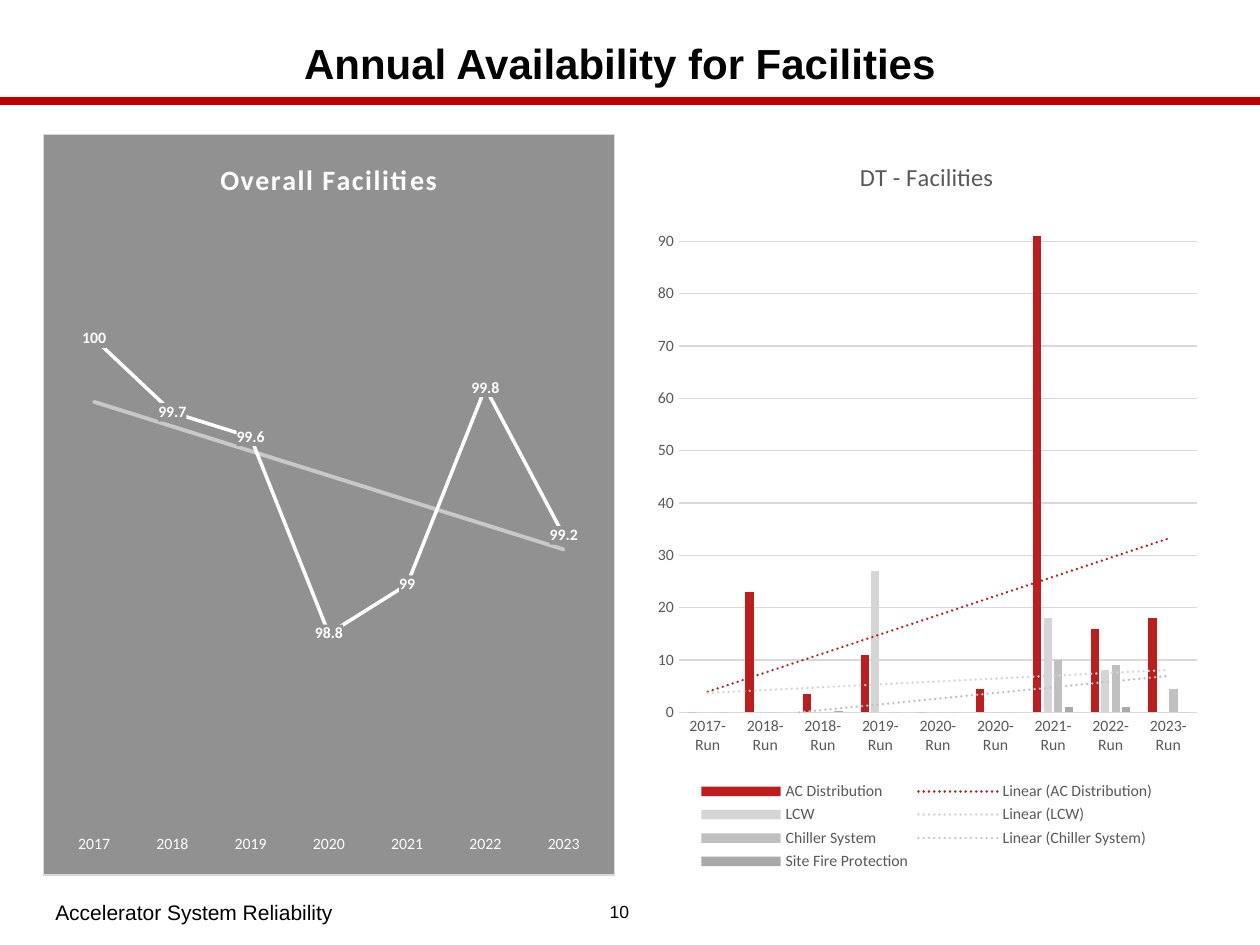
import dataclasses

import lxml.etree
import pptx
import pptx.chart.data
import pptx.dml.color
import pptx.enum.chart
import pptx.enum.shapes
import pptx.enum.text
import pptx.oxml
import pptx.oxml.ns
import pptx.util

Inches = pptx.util.Inches
Pt = pptx.util.Pt
qn = pptx.oxml.ns.qn
Chart = pptx.enum.chart
Align = pptx.enum.text.PP_ALIGN


@dataclasses.dataclass(frozen=True)
class Theme:
    """Colours, fonts and type sizes of the slide."""
    text_font: str = "Arial"
    chart_font: str = "Calibri"
    black: str = "000000"
    white: str = "FFFFFF"
    rule: str = "C00000"
    panel: str = "919191"
    grid: str = "D9D9D9"
    label: str = "595959"
    columns: tuple = ("BE1D1D", "D5D5D5", "C0C0C0", "A9A9A9")
    title_size: int = 24
    footer_size: int = 12
    number_size: int = 10
    panel_title_size: int = 16
    chart_title_size: int = 14
    chart_size: int = 9


THEME = Theme()
YEARS = ["2017", "2018", "2019", "2020", "2021", "2022", "2023"]
AVAILABILITY = [100, 99.7, 99.6, 98.8, 99, 99.8, 99.2]
RUNS = [year + "-Run" for year in
        ("2017", "2018", "2018", "2019", "2020", "2020", "2021", "2022", "2023")]
DOWNTIME = {
    "AC Distribution": [0, 23, 3.5, 11, 0, 4.5, 91, 16, 18],
    "LCW": [0, 0, 0, 27, 0, 0, 18, 8, 0],
    "Chiller System": [0, 0, 0, 0, 0, 0, 10, 9, 4.5],
    "Site Fire Protection": [0, 0, 0.3, 0, 0, 0, 1, 1, 0],
}


def rgb(value):
    """Return a colour from its hex digits."""
    return pptx.dml.color.RGBColor.from_string(value)


def style_font(font, name, size, color, bold=False):
    """Set the face, size, colour and weight of a font."""
    font.name, font.size, font.bold = name, Pt(size), bold
    font.color.rgb = rgb(color)


def style_line(line, color, width):
    """Give a line a solid colour and a width in points."""
    line.color.rgb = rgb(color)
    line.width = Pt(width)


def chart_xml(body):
    """Parse one chart element, with its namespaces declared."""
    name, rest = body[1:].split(">", 1)
    spaces = pptx.oxml.ns.nsdecls("c", "a")
    return pptx.oxml.parse_xml(f"<{name} {spaces}>{rest}")


def solid_fill(color, opacity=100):
    """Return the XML of a solid fill."""
    return (f'<a:solidFill><a:srgbClr val="{color}">'
            f'<a:alpha val="{opacity * 1000}"/></a:srgbClr></a:solidFill>')


def add_text(page, box, text, size, align=Align.LEFT, bold=False, spacing=1.0):
    """Place one line of text, centred vertically in its box."""
    frame = page.shapes.add_textbox(*map(Inches, box)).text_frame
    frame.word_wrap = True
    frame.vertical_anchor = pptx.enum.text.MSO_ANCHOR.MIDDLE
    para = frame.paragraphs[0]
    para.text, para.alignment, para.line_spacing = text, align, spacing
    style_font(para.font, THEME.text_font, size, THEME.black, bold)


def add_rule(page, left, right, top):
    """Draw the heavy rule under the heading."""
    rule = page.shapes.add_connector(
        pptx.enum.shapes.MSO_CONNECTOR.STRAIGHT,
        Inches(left), Inches(top), Inches(right), Inches(top))
    style_line(rule.line, THEME.rule, 4.5)
    lxml.etree.SubElement(rule.line._get_or_add_ln().getparent(), qn("a:effectLst"))


def add_trend(series, color, width, dash, opacity=100):
    """Add a linear trend line to a series."""
    trend = chart_xml(
        f'<c:trendline><c:spPr><a:ln w="{Pt(width)}" cap="rnd">'
        f'{solid_fill(color, opacity)}<a:prstDash val="{dash}"/></a:ln></c:spPr>'
        '<c:trendlineType val="linear"/><c:dispRSqr val="0"/>'
        '<c:dispEq val="0"/></c:trendline>')
    series._element.find(qn("c:cat")).addprevious(trend)


def place_plot(chart, left, top, width, height):
    """Fix the inner plot area as fractions of the chart."""
    area = chart._chartSpace.chart.plotArea
    for old in area.findall(qn("c:layout")):
        area.remove(old)
    sizes = "".join(f'<c:{key} val="{value}"/>' for key, value in
                    zip("xywh", (left, top, width, height)))
    area.insert(0, chart_xml(
        '<c:layout><c:manualLayout><c:layoutTarget val="inner"/>'
        '<c:xMode val="edge"/><c:yMode val="edge"/>'
        f'{sizes}</c:manualLayout></c:layout>'))


def add_chart(page, box, kind, categories, rows, title, title_style, axis_color):
    """Add a chart with its title and axis text, and return it."""
    data = pptx.chart.data.CategoryChartData()
    data.categories = categories
    for name, values in rows.items():
        data.add_series(name, values)
    chart = page.shapes.add_chart(kind, *map(Inches, box), data).chart
    style_font(chart.font, THEME.chart_font, THEME.chart_size, axis_color)
    chart.has_title, chart.has_legend = True, False
    para = chart.chart_title.text_frame.paragraphs[0]
    para.text = title
    style_font(para.font, THEME.chart_font, *title_style)
    chart.chart_title.include_in_layout = False
    chart.plots[0].vary_by_categories = False
    for axis in (chart.category_axis, chart.value_axis):
        axis.major_tick_mark = axis.minor_tick_mark = Chart.XL_TICK_MARK.NONE
        axis.format.line.fill.background()
        style_font(axis.tick_labels.font, THEME.chart_font, THEME.chart_size, axis_color)
    return chart


def add_availability(page, box):
    """Build the grey panel with the yearly availability line."""
    chart = add_chart(page, box, Chart.XL_CHART_TYPE.LINE, YEARS,
                      {"Series 1": AVAILABILITY}, "Overall Facilities",
                      (THEME.panel_title_size, THEME.white, True), THEME.white)
    title = chart.chart_title.text_frame.paragraphs[0]
    title.font._element.set("spc", "100")
    axis = chart.value_axis
    axis.minimum_scale, axis.maximum_scale = 98, 100.5
    axis.has_major_gridlines = axis.visible = False
    place_plot(chart, 0.02, 0.11, 0.96, 0.83)
    series = chart.series[0]
    series.smooth = False
    series.marker.style = Chart.XL_MARKER_STYLE.NONE
    style_line(series.format.line, THEME.white, 2)
    labels = series.data_labels
    labels.show_value, labels.position = True, Chart.XL_LABEL_POSITION.CENTER
    style_font(labels.font, THEME.chart_font, THEME.chart_size, THEME.white, True)
    labels._element.find(qn("c:txPr")).addprevious(
        chart_xml(f"<c:spPr>{solid_fill(THEME.panel)}</c:spPr>"))
    add_trend(series, THEME.white, 2.25, "solid", 50)
    chart._chartSpace.chart.addnext(chart_xml(
        f'<c:spPr>{solid_fill(THEME.panel)}<a:ln w="{Pt(0.75)}">'
        f'{solid_fill(THEME.grid)}</a:ln></c:spPr>'))


def add_downtime(page, box):
    """Build the column chart of downtime for each run."""
    chart = add_chart(page, box, Chart.XL_CHART_TYPE.COLUMN_CLUSTERED, RUNS,
                      DOWNTIME, "DT - Facilities",
                      (THEME.chart_title_size, THEME.label), THEME.label)
    axis = chart.value_axis
    axis.minimum_scale, axis.maximum_scale, axis.major_unit = 0, 95, 10
    style_line(axis.major_gridlines.format.line, THEME.grid, 0.75)
    style_line(chart.category_axis.format.line, THEME.grid, 0.75)
    place_plot(chart, 0.06, 0.11, 0.92, 0.67)
    plot = chart.plots[0]
    plot.gap_width, plot.overlap = 219, -27
    for series, color in zip(plot.series, THEME.columns):
        series.format.fill.solid()
        series.format.fill.fore_color.rgb = rgb(color)
        if series.name != "Site Fire Protection":
            add_trend(series, color, 1.5, "sysDot")
    chart.has_legend = True
    chart.legend.position = Chart.XL_LEGEND_POSITION.BOTTOM
    chart.legend.include_in_layout = False
    style_font(chart.legend.font, THEME.chart_font, THEME.chart_size, THEME.label)


def main():
    """Build the slide and save the deck."""
    deck = pptx.Presentation()
    deck.slide_width, deck.slide_height = Inches(10), Inches(7.5)
    page = deck.slides.add_slide(deck.slide_layouts[6])
    add_rule(page, -0.01, 10, 0.8)
    add_text(page, (0.34, 0.26, 9.16, 0.53), "Annual Availability for Facilities",
             THEME.title_size, Align.CENTER, True, 0.9)
    add_text(page, (0.34, 7.07, 4.28, 0.34), "Accelerator System Reliability",
             THEME.footer_size)
    add_text(page, (4.62, 7.07, 0.59, 0.33), "10", THEME.number_size, Align.CENTER)
    add_availability(page, (0.34, 1.06, 4.54, 5.89))
    add_downtime(page, (5.12, 1.06, 4.47, 5.89))
    deck.save("out.pptx")


if __name__ == "__main__":
    main()
